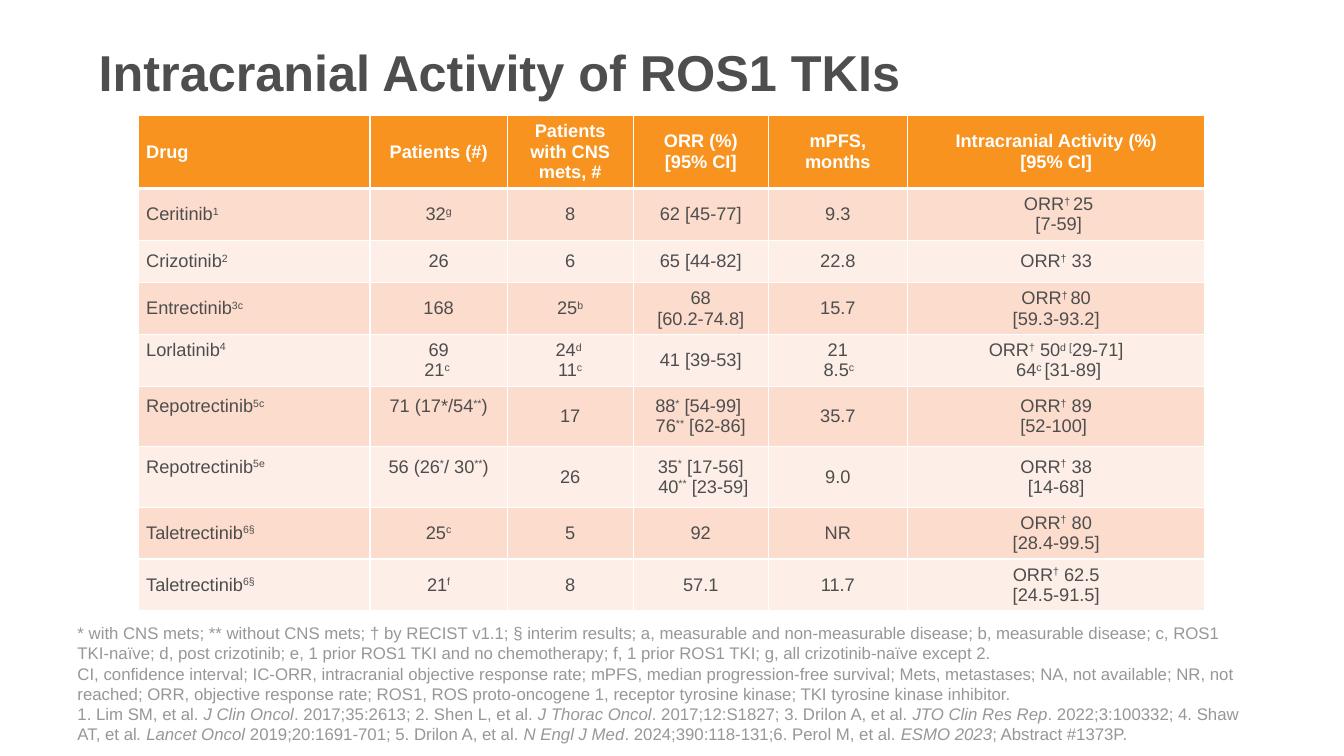
import pptx
import pptx.dml.color
import pptx.enum.text
import pptx.oxml
import pptx.oxml.ns
import pptx.util
from pptx.util import Inches

RGB = pptx.dml.color.RGBColor
ALIGN = pptx.enum.text.PP_ALIGN
ANCHOR = pptx.enum.text.MSO_ANCHOR

WHITE = RGB(0xFF, 0xFF, 0xFF)
ORANGE = RGB(0xF7, 0x93, 0x1E)
PEACH = RGB(0xFC, 0xDC, 0xCD)
CREAM = RGB(0xFD, 0xEE, 0xE8)
DARK = RGB(0x4D, 0x4E, 0x4D)
INK = RGB(0x4D, 0x4D, 0x4D)
GREY = RGB(0x97, 0x97, 0x97)

TITLE = {"name": "Arial", "size": pptx.util.Pt(36), "bold": True}
HEAD = {"name": "Arial", "size": pptx.util.Pt(13), "bold": True}
BODY = {"name": "Arial", "size": pptx.util.Pt(13), "bold": False}
NOTE = {"name": "Arial", "size": pptx.util.Pt(12)}

WIDTHS = [2.3, 1.36, 1.25, 1.34, 1.38, 2.95]
HEIGHTS = [0.72, 0.51, 0.42, 0.51, 0.51, 0.6, 0.6, 0.51, 0.51]
LINES = 0.4
RAISED = {(4, 0), (5, 0), (5, 1), (6, 0), (6, 1)}

ROWS = [
    ["Drug", "Patients (#)", "Patients with CNS mets, #", "ORR (%)\n[95% CI]",
     "mPFS, months", "Intracranial Activity (%)\n[95% CI]"],
    ["Ceritinib|1", "32|g", "8", "62 [45-77]", "9.3", " ORR|† |25\n [7-59]"],
    ["Crizotinib|2", "26", "6", "65 [44-82]", "22.8", "ORR|†| 33"],
    ["Entrectinib|3c", "168", "25|b", "68\n[60.2-74.8]", "15.7",
     "ORR|† |80\n[59.3-93.2]"],
    ["Lorlatinib|4", "69\n21|c ", "24|d \n11|c", "41 [39-53]", "21\n 8.5|c ",
     "ORR|†| 50|d [|29-71]\n 64|c |[31-89]"],
    ["Repotrectinib|5c", "71 (17*/54|**|)", "17",
     "88|*| [54-99] \n76|**| [62-86]", "35.7", "ORR|†| 89\n[52-100] "],
    ["Repotrectinib|5e", "56 (26|*|/ 30|**|)", "26",
     "35|*| [17-56]\n 40|**| [23-59]", "9.0", "ORR|†| 38\n[14-68]"],
    ["Taletrectinib|6§", "25|c", "5", "92", "NR", "ORR|†| 80\n[28.4-99.5]"],
    ["Taletrectinib|6§", "21|f", "8", "57.1", "11.7",
     "ORR|†| 62.5\n[24.5-91.5]"],
]

NOTES = [
    "* with CNS mets; ** without CNS mets; † by RECIST v1.1; § interim results; "
    "a, measurable and non-measurable disease; b, measurable disease; "
    "c, ROS1 TKI-naïve; d, post crizotinib; e, 1 prior ROS1 TKI and no "
    "chemotherapy; f, 1 prior ROS1 TKI; g, all crizotinib-naïve except 2.",
    "CI, confidence interval; IC-ORR, intracranial objective response rate; "
    "mPFS, median progression-free survival; Mets, metastases; "
    "NA, not available; NR, not reached; ORR, objective response rate; "
    "ROS1, ROS proto-oncogene 1, receptor tyrosine kinase; "
    "TKI tyrosine kinase inhibitor.",
    "1. Lim SM, et al. |J Clin Oncol|. 2017;35:2613; "
    "2. Shen L, et al. |J Thorac Oncol|. 2017;12:S1827; "
    "3. Drilon A, et al. |JTO Clin Res Rep|. 2022;3:100332; "
    "4. Shaw AT, et al|. Lancet Oncol |2019;20:1691-701; "
    "5. Drilon A, et al. |N Engl J Med|. 2024;390:118-131;"
    "6. Perol M, et al. |ESMO 2023|; Abstract #1373P.",
]


def raise_run(run):
    run._r.get_or_add_rPr().set("baseline", "30000")


def slant_run(run):
    run.font.italic = True


def write(frame, lines, looks, color, align=ALIGN.LEFT, mark=slant_run):
    for i, line in enumerate(lines):
        para = frame.add_paragraph() if i else frame.paragraphs[0]
        para.alignment = align
        for j, part in enumerate(line.split("|")):
            run = para.add_run()
            run.text = part
            for key, value in looks.items():
                setattr(run.font, key, value)
            run.font.color.rgb = color
            if j % 2:
                mark(run)


def add_text(slide, box, lines, looks, color, anchor):
    frame = slide.shapes.add_textbox(*map(Inches, box)).text_frame
    frame.word_wrap = True
    frame.vertical_anchor = anchor
    write(frame, lines, looks, color)


def add_edges(cell, row):
    sides = {"L": 1, "R": 1, "T": 3 if row == 1 else 1, "B": 1 if row else 3}
    for side, width in sides.items():
        cell._tc.get_or_add_tcPr().append(pptx.oxml.parse_xml(
            f'<a:ln{side} {pptx.oxml.ns.nsdecls("a")} w="{width * 12700}">'
            f'<a:solidFill><a:srgbClr val="{WHITE}"/></a:solidFill></a:ln{side}>'))


def fill_cell(cell, row, col, text):
    lift = (row, col) in RAISED
    top = (HEIGHTS[row] - LINES) / 2 if lift else 0.04
    form = {"margin_left": Inches(0.08), "margin_right": Inches(0.08),
            "margin_top": Inches(top), "margin_bottom": Inches(0.04),
            "vertical_anchor": ANCHOR.TOP if lift else ANCHOR.MIDDLE}
    for key, value in form.items():
        setattr(cell, key, value)
    add_edges(cell, row)
    cell.fill.solid()
    cell.fill.fore_color.rgb = (PEACH if row % 2 else CREAM) if row else ORANGE
    write(cell.text_frame, text.split("\n"), BODY if row else HEAD,
          INK if row else WHITE, ALIGN.CENTER if col else ALIGN.LEFT, raise_run)


def add_grid(slide, box):
    table = slide.shapes.add_table(
        len(HEIGHTS), len(WIDTHS), *map(Inches, box)).table
    for col, width in zip(table.columns, WIDTHS):
        col.width = Inches(width)
    for row, height in zip(table.rows, HEIGHTS):
        row.height = Inches(height)
    for r, texts in enumerate(ROWS):
        for c, text in enumerate(texts):
            fill_cell(table.cell(r, c), r, c, text)


def main():
    deck = pptx.Presentation()
    deck.slide_width, deck.slide_height = Inches(13.33), Inches(7.5)
    slide = deck.slides.add_slide(deck.slide_layouts[6])
    add_text(slide, (0.88, 0.08, 11.38, 1.25),
             ["Intracranial Activity of ROS1 TKIs"], TITLE, DARK, ANCHOR.MIDDLE)
    add_grid(slide, (1.37, 1.14, sum(WIDTHS), sum(HEIGHTS)))
    add_text(slide, (0.67, 6.15, 11.75, 1.28), NOTES, NOTE, GREY, ANCHOR.BOTTOM)
    deck.save("out.pptx")


if __name__ == "__main__":
    main()
